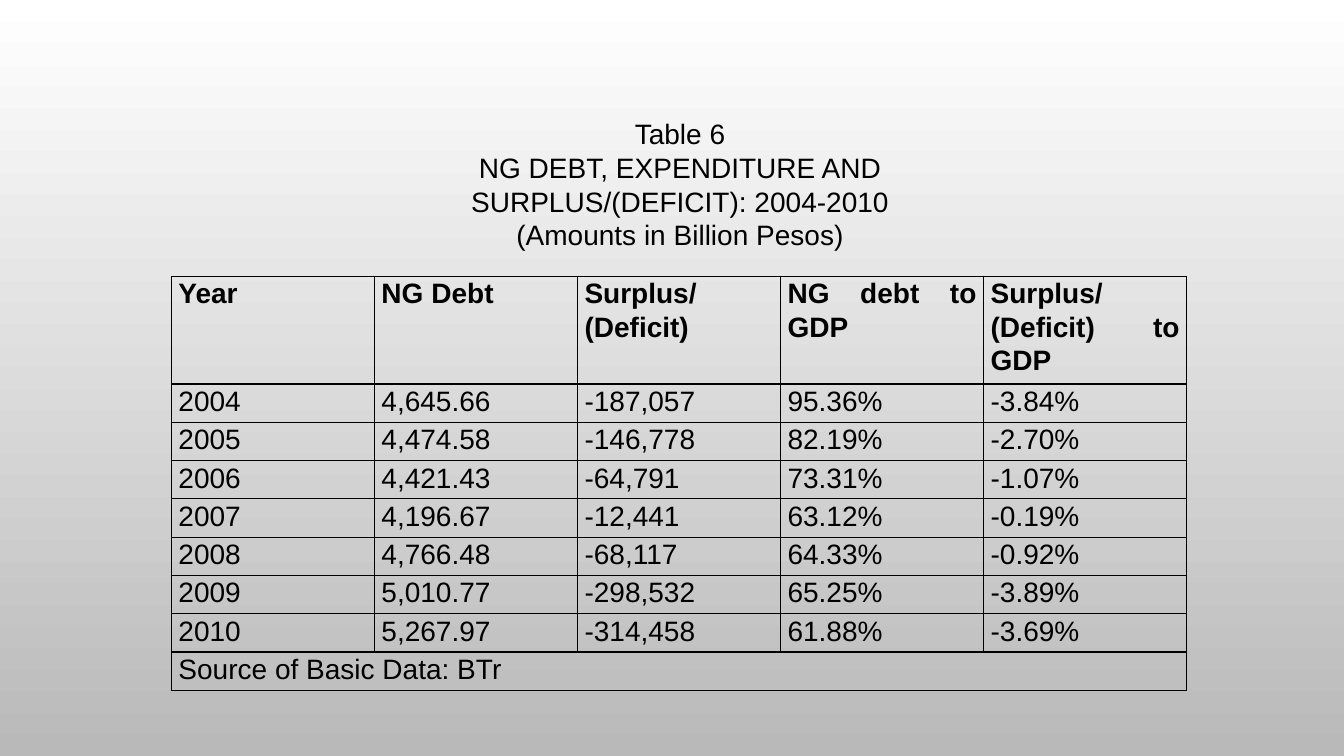
from dataclasses import dataclass

from lxml.etree import SubElement
from pptx import Presentation
from pptx.dml.color import RGBColor as RGB
from pptx.enum.text import MSO_ANCHOR as Anchor, MSO_AUTO_SIZE as AutoSize, PP_ALIGN as Align
from pptx.oxml.ns import qn
from pptx.util import Inches, Pt


@dataclass(frozen=True)
class Theme:
    ink: str = "000000"
    sky: str = "FFFFFF"
    ground: str = "B9B9B9"
    font: str = "Arial"
    size: int = 20
    rule: int = 1
    spacing: float = 1.07


THEME = Theme()
SLIDE_W, SLIDE_H = 13.33, 7.5

# Boxes: left, top, width, height in inches
CAPTION_BOX = (3.41, 1.11, 6.67, 1.45)
DEBT_BOX = (1.7, 2.74, 10.07, 4.11)
HEADER_SHARE = 0.26

CAPTION = [
    "Table 6",
    "NG DEBT, EXPENDITURE AND SURPLUS/(DEFICIT): 2004-2010",
    "(Amounts in Billion Pesos)",
]
HEADINGS = ["Year", "NG Debt", "Surplus/ (Deficit)", "NG debt to GDP",
            "Surplus/(Deficit) to GDP"]
YEARS = [
    ["2004", "4,645.66", "-187,057", "95.36%", "-3.84%"],
    ["2005", "4,474.58", "-146,778", "82.19%", "-2.70%"],
    ["2006", "4,421.43", "-64,791", "73.31%", "-1.07%"],
    ["2007", "4,196.67", "-12,441", "63.12%", "-0.19%"],
    ["2008", "4,766.48", "-68,117", "64.33%", "-0.92%"],
    ["2009", "5,010.77", "-298,532", "65.25%", "-3.89%"],
    ["2010", "5,267.97", "-314,458", "61.88%", "-3.69%"],
]
SOURCE = "Source of Basic Data: BTr"


def add_words(paragraph, words, align, bold=False):
    paragraph.alignment = align
    run = paragraph.add_run()
    run.text = words
    run.font.name = THEME.font
    run.font.size = Pt(THEME.size)
    run.font.bold = bold
    run.font.color.rgb = RGB.from_string(THEME.ink)


def paint_background(slide):
    fill = slide.background.fill
    fill.gradient()
    fill.gradient_angle = 270
    for stop, colour in zip(fill.gradient_stops, (THEME.sky, THEME.ground)):
        stop.color.rgb = RGB.from_string(colour)


def add_caption(slide, box):
    caption = slide.shapes.title
    caption.left, caption.top, caption.width, caption.height = map(Inches, box)
    frame = caption.text_frame
    frame.word_wrap = True
    frame.auto_size = AutoSize.NONE
    frame.vertical_anchor = Anchor.TOP
    for index, line in enumerate(CAPTION):
        paragraph = frame.add_paragraph() if index else frame.paragraphs[0]
        add_words(paragraph, line, Align.CENTER)


def rule_cell(cell):
    properties = cell._tc.get_or_add_tcPr()
    for side in ("a:lnL", "a:lnR", "a:lnT", "a:lnB"):
        border = SubElement(properties, qn(side), w=str(Pt(THEME.rule)))
        solid = SubElement(border, qn("a:solidFill"))
        SubElement(solid, qn("a:srgbClr"), val=THEME.ink)


def add_debt_table(slide, box):
    left, top, width, height = box
    rows = [HEADINGS, *YEARS, [SOURCE]]
    debt = slide.shapes.add_table(len(rows), len(HEADINGS), *map(Inches, box)).table
    debt.first_row = debt.horz_banding = False

    # Equal columns; a tall header over equal rows
    for column in debt.columns:
        column.width = Inches(width / len(HEADINGS))
    header_height = height * HEADER_SHARE
    for index, row in enumerate(debt.rows):
        row.height = Inches((height - header_height) / (len(rows) - 1) if index else header_height)

    # Ruled, unfilled cells
    for cell in debt.iter_cells():
        cell.margin_left = cell.margin_right = Inches(0.07)
        cell.margin_top = cell.margin_bottom = 0
        rule_cell(cell)
        cell.fill.background()

    # The source note spans the last row
    last = len(rows) - 1
    debt.cell(last, 0).merge(debt.cell(last, len(HEADINGS) - 1))

    for row_index, entries in enumerate(rows):
        for column_index, entry in enumerate(entries):
            paragraph = debt.cell(row_index, column_index).text_frame.paragraphs[0]
            paragraph.line_spacing = THEME.spacing
            add_words(paragraph, entry, Align.JUSTIFY, bold=row_index == 0)


def main():
    deck = Presentation()
    deck.slide_width, deck.slide_height = Inches(SLIDE_W), Inches(SLIDE_H)
    slide = deck.slides.add_slide(deck.slide_layouts.get_by_name("Title Only"))
    paint_background(slide)
    add_caption(slide, CAPTION_BOX)
    add_debt_table(slide, DEBT_BOX)
    deck.save("out.pptx")


if __name__ == "__main__":
    main()
